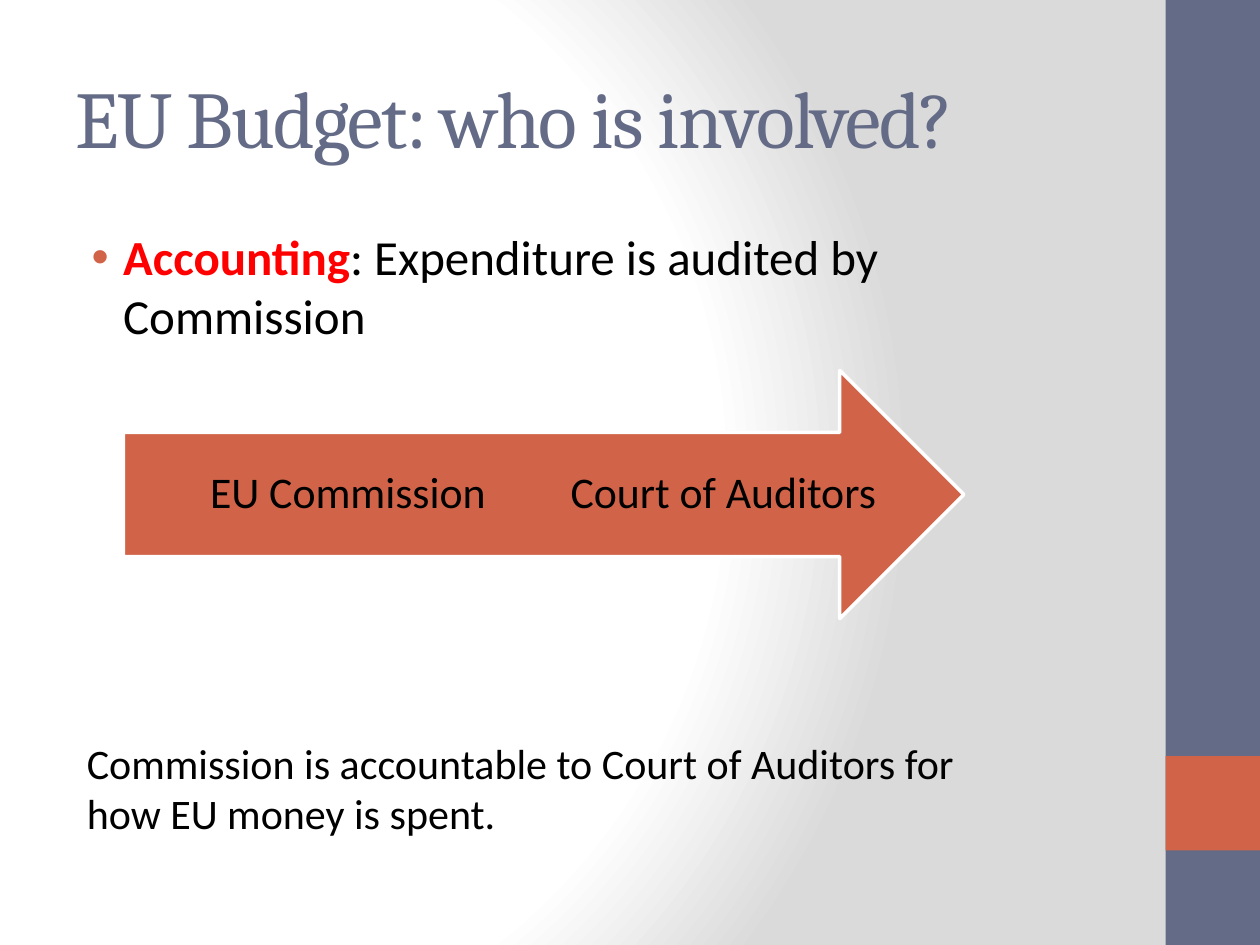
from lxml import etree
from pptx import Presentation
from pptx.dml.color import RGBColor
from pptx.enum import shapes, text
from pptx.oxml import ns
from pptx.util import Inches, Pt

SLATE, RUST, WHITE, BLACK, RED = "646B86", "D16349", "FFFFFF", "000000", "FF0000"


def color(code):
    return RGBColor.from_string(code)


def add_shape(page, kind, box, fill, line=None):
    shape = page.shapes.add_shape(kind, *map(Inches, box))
    shape.shadow.inherit = False
    shape.fill.solid()
    shape.fill.fore_color.rgb = color(fill)
    if line:
        shape.line.color.rgb = color(line)
        shape.line.width = Pt(2)
    else:
        shape.line.fill.background()
    return shape


def add_text(page, box, paras, size, font="Calibri", anchor=text.MSO_ANCHOR.TOP,
             align=text.PP_ALIGN.LEFT, insets=(0.1, 0.05), leading=None, tracking=None):
    frame = page.shapes.add_textbox(*map(Inches, box)).text_frame
    frame.word_wrap = True
    frame.vertical_anchor = anchor
    frame.margin_left = frame.margin_right = Inches(insets[0])
    frame.margin_top = frame.margin_bottom = Inches(insets[1])
    for index, spans in enumerate(paras):
        para = frame.paragraphs[0] if index == 0 else frame.add_paragraph()
        para.alignment = align
        para.line_spacing = leading
        for words, code, bold in spans:
            span = para.add_run()
            span.text = words
            span.font.name = font
            span.font.size = Pt(size)
            span.font.bold = bold
            span.font.color.rgb = color(code)
            if tracking:
                span.font._element.set("spc", str(tracking))
    return frame


def add_bullet(para, code, indent, hanging):
    props = para._p.get_or_add_pPr()
    props.set("marL", str(Inches(indent)))
    props.set("indent", str(-Inches(hanging)))
    tint = etree.SubElement(props, ns.qn("a:buClr"))
    etree.SubElement(tint, ns.qn("a:srgbClr"), val=code)
    etree.SubElement(props, ns.qn("a:buFont"), typeface="Arial")
    etree.SubElement(props, ns.qn("a:buChar"), char="•")


def paint_background(page):
    page.background.fill.gradient()
    gradient = page._element.find(".//" + ns.qn("a:gradFill"))
    for child in list(gradient):
        gradient.remove(child)
    stops = etree.SubElement(gradient, ns.qn("a:gsLst"))
    for position, code in ((0, WHITE), (75, WHITE), (100, "DADADA")):
        stop = etree.SubElement(stops, ns.qn("a:gs"), pos=str(position * 1000))
        etree.SubElement(stop, ns.qn("a:srgbClr"), val=code)
    circle = etree.SubElement(gradient, ns.qn("a:path"), path="circle")
    etree.SubElement(circle, ns.qn("a:fillToRect"),
                     l="20000", t="50000", r="100000", b="50000")


def add_sidebar(page, box):
    left, top, width, height = box
    add_shape(page, shapes.MSO_SHAPE.RECTANGLE, box, SLATE)
    accent = (left, top + height - 2 * width, width, width)
    add_shape(page, shapes.MSO_SHAPE.RECTANGLE, accent, RUST)


def add_title(page, box):
    add_text(page, box, [[("EU Budget: who is involved?", SLATE, False)]], 46,
             font="Cambria", anchor=text.MSO_ANCHOR.MIDDLE, tracking=-100)


def add_body(page, box):
    spans = [("Accounting", RED, True),
             (": Expenditure is audited by Commission", BLACK, False)]
    frame = add_text(page, box, [spans], 28)
    add_bullet(frame.paragraphs[0], RUST, 0.38, 0.25)


def add_process(page, box):
    left, top, width, height = box
    add_shape(page, shapes.MSO_SHAPE.RIGHT_ARROW, box, RUST, line=WHITE)
    for index, label in enumerate(("EU Commission", "Court of Auditors")):
        label_box = (left + 0.54 + 2.98 * index, top + height / 4, 2.48, height / 2)
        add_text(page, label_box, [[(label, BLACK, False)]], 25,
                 anchor=text.MSO_ANCHOR.MIDDLE, align=text.PP_ALIGN.CENTER,
                 insets=(0, 0.28), leading=0.9)


def add_conclusion(page, box):
    lines = ("Commission is accountable to Court of Auditors for",
             "how EU money is spent.")
    add_text(page, box, [[(line, BLACK, False)] for line in lines], 24)


def main():
    deck = Presentation()
    deck.slide_width, deck.slide_height = Inches(10), Inches(7.5)
    page = deck.slides.add_slide(deck.slide_layouts[6])
    paint_background(page)
    add_sidebar(page, (9.25, 0, 0.75, 7.5))
    add_title(page, (0.5, 0.3, 8.33, 1.25))
    add_body(page, (0.5, 1.75, 8.33, 5.25))
    add_process(page, (0.98, 2.94, 6.67, 1.97))
    add_conclusion(page, (0.59, 5.8, 7.21, 0.91))
    deck.save("out.pptx")


if __name__ == "__main__":
    main()
